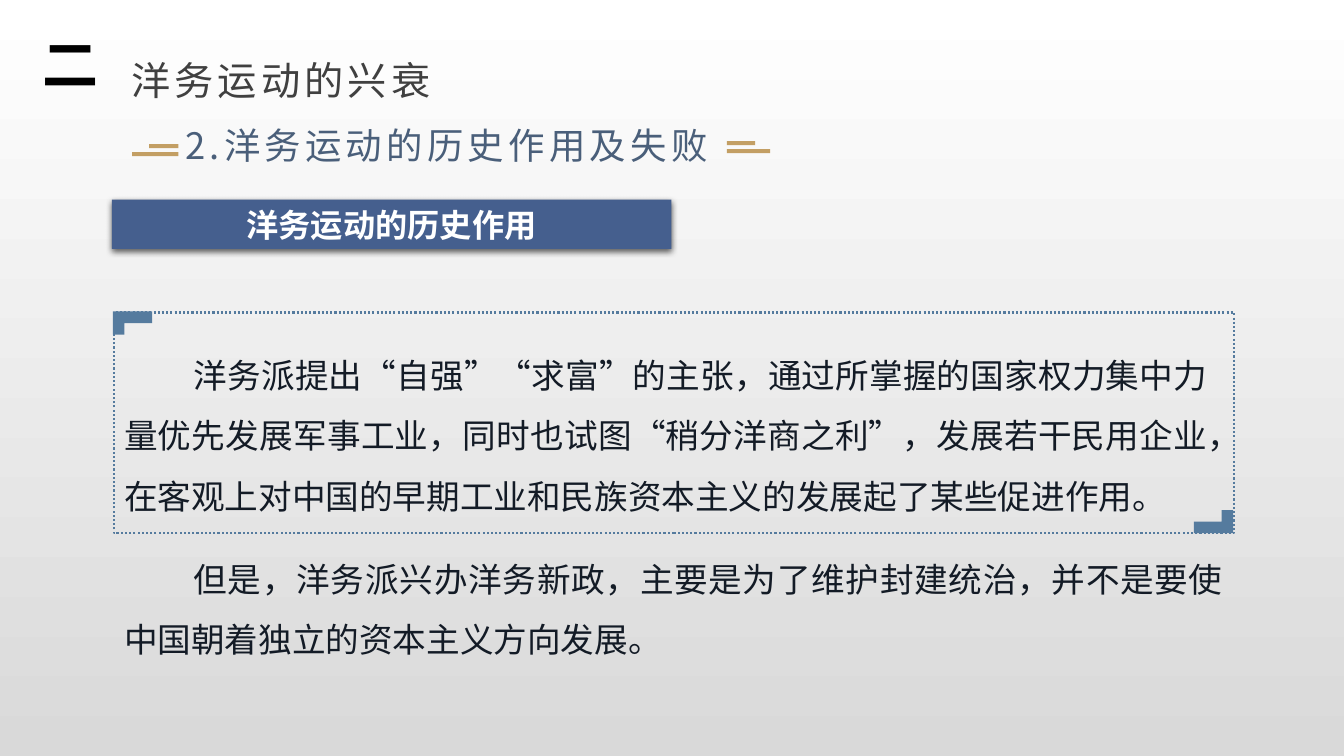
import pptx
import pptx.util
import pptx.dml.color
import pptx.enum.dml
import pptx.enum.lang
import pptx.enum.shapes
import pptx.enum.text
import pptx.oxml
import pptx.oxml.ns

Inches = pptx.util.Inches
Pt = pptx.util.Pt
SHAPE = pptx.enum.shapes.MSO_SHAPE
ALIGN = pptx.enum.text.PP_ALIGN
ANCHOR = pptx.enum.text.MSO_ANCHOR

FONT = "Noto Sans CJK SC"
STEEL = "557B9E"
GOLD = "C39F64"
BACKGROUND = ["FFFFFF", "D9D9D9"]

NUMBER = ("二", (0.32, 0.24, 0.6, 0.77))
TITLE = ("洋务运动的兴衰", (1.2, 0.42, 10.27, 0.59))
SUBTITLE = ("2.洋务运动的历史作用及失败", (1.74, 1.05, 7.19, 0.58))
BANNER = ("洋务运动的历史作用", (1.11, 1.98, 5.55, 0.49))
PARAGRAPHS = [
    ("洋务派提出“自强”“求富”的主张，通过所掌握的国家权力集中力量优先发展军事工业，"
     "同时也试图“稍分洋商之利”，发展若干民用企业，在客观上对中国的早期工业和民族资本主义的发展起了某些促进作用。",
     (1.13, 3.27, 10.95, 1.82)),
    ("但是，洋务派兴办洋务新政，主要是为了维护封建统治，并不是要使中国朝着独立的资本主义方向发展。",
     (1.13, 5.29, 11.1, 1.22)),
]
GOLD_BARS = [(7.21, 1.48, 0.43), (7.21, 1.4, 0.28), (1.31, 1.51, 0.46), (1.48, 1.43, 0.29)]
BAR_HEIGHT = 0.04
FRAME = (1.13, 3.1, 11.11, 2.19)
CORNERS = [((11.92, 4.98, 0.23, 0.39), 270), ((1.2, 3.01, 0.23, 0.39), 90)]

SHADOW = (
    '<a:effectLst xmlns:a="http://schemas.openxmlformats.org/drawingml/2006/main">'
    '<a:outerShdw blurRad="57150" dist="19050" dir="5400000" algn="ctr" rotWithShape="0">'
    '<a:srgbClr val="000000"><a:alpha val="63000"/></a:srgbClr></a:outerShdw></a:effectLst>'
)
NO_BULLET = '<a:buNone xmlns:a="http://schemas.openxmlformats.org/drawingml/2006/main"/>'


def rgb(value):
    return pptx.dml.color.RGBColor.from_string(value)


def place(sp, box):
    sp.left, sp.top, sp.width, sp.height = map(Inches, box)


def add_text(sp, text, size, color, bold=False, align=ALIGN.LEFT, spacing=0,
             leading=None, indent=0, anchor=ANCHOR.TOP):
    tf = sp.text_frame
    tf.word_wrap = True
    tf.auto_size = pptx.enum.text.MSO_AUTO_SIZE.NONE
    tf.vertical_anchor = anchor
    p = tf.paragraphs[0]
    p.alignment = align
    p.space_before = Pt(0)
    if leading:
        p.line_spacing = leading
    pPr = p._p.get_or_add_pPr()
    pPr.set("marL", "0")
    pPr.set("indent", str(Inches(indent)))
    pPr.append(pptx.oxml.parse_xml(NO_BULLET))
    r = p.add_run()
    r.text = text
    r.font.size = Pt(size)
    r.font.bold = bold
    r.font.name = FONT
    r.font.color.rgb = rgb(color)
    r.font.language_id = pptx.enum.lang.MSO_LANGUAGE_ID.SIMPLIFIED_CHINESE
    rPr = r._r.get_or_add_rPr()
    if spacing:
        rPr.set("spc", str(spacing * 100))
    ea = rPr.makeelement(pptx.oxml.ns.qn("a:ea"), {"typeface": FONT})
    rPr.find(pptx.oxml.ns.qn("a:latin")).addnext(ea)


def add_shape(s, kind, box, fill=None):
    sp = s.shapes.add_shape(kind, *map(Inches, box))
    sp.shadow.inherit = False
    sp.line.fill.background()
    if fill:
        sp.fill.solid()
        sp.fill.fore_color.rgb = rgb(fill)
    else:
        sp.fill.background()
    return sp


def add_textbox(s, box):
    return s.shapes.add_textbox(*map(Inches, box))


def main():
    prs = pptx.Presentation()
    prs.slide_width, prs.slide_height = Inches(13.33), Inches(7.5)
    s = prs.slides.add_slide(prs.slide_layouts[3])

    fill = s.background.fill
    fill.gradient()
    fill.gradient_angle = 270
    for stop, position, color in zip(fill.gradient_stops, (0, 1), BACKGROUND):
        stop.position = position
        stop.color.rgb = rgb(color)

    text, box = TITLE
    place(s.shapes.title, box)
    add_text(s.shapes.title, text, 28, "404040", spacing=3, leading=Pt(40))

    for index, (text, box) in enumerate(PARAGRAPHS, 1):
        body = s.placeholders[index]
        place(body, box)
        add_text(body, text, 24, "131B26", align=ALIGN.JUSTIFY, leading=1.5, indent=0.69)

    text, box = NUMBER
    add_text(add_textbox(s, box), text, 40, "000000", bold=True)
    text, box = SUBTITLE
    add_text(add_textbox(s, box), text, 26, "4A5F7A", spacing=3, leading=Pt(40))

    for left, top, width in GOLD_BARS:
        add_shape(s, SHAPE.RECTANGLE, (left, top, width, BAR_HEIGHT), GOLD)

    text, box = BANNER
    banner = add_shape(s, SHAPE.RECTANGLE, box, "455F8E")
    effects = banner._element.spPr.find(pptx.oxml.ns.qn("a:effectLst"))
    effects.getparent().replace(effects, pptx.oxml.parse_xml(SHADOW))
    add_text(banner, text, 23, "FFFFFF", bold=True, align=ALIGN.CENTER, anchor=ANCHOR.MIDDLE)

    frame = add_shape(s, SHAPE.RECTANGLE, FRAME)
    frame.line.color.rgb = rgb(STEEL)
    frame.line.width = Pt(1.5)
    frame.line.dash_style = pptx.enum.dml.MSO_LINE.ROUND_DOT

    for box, angle in CORNERS:
        corner = add_shape(s, SHAPE.CORNER, box, STEEL)
        corner.rotation = angle

    prs.save("out.pptx")


if __name__ == "__main__":
    main()
